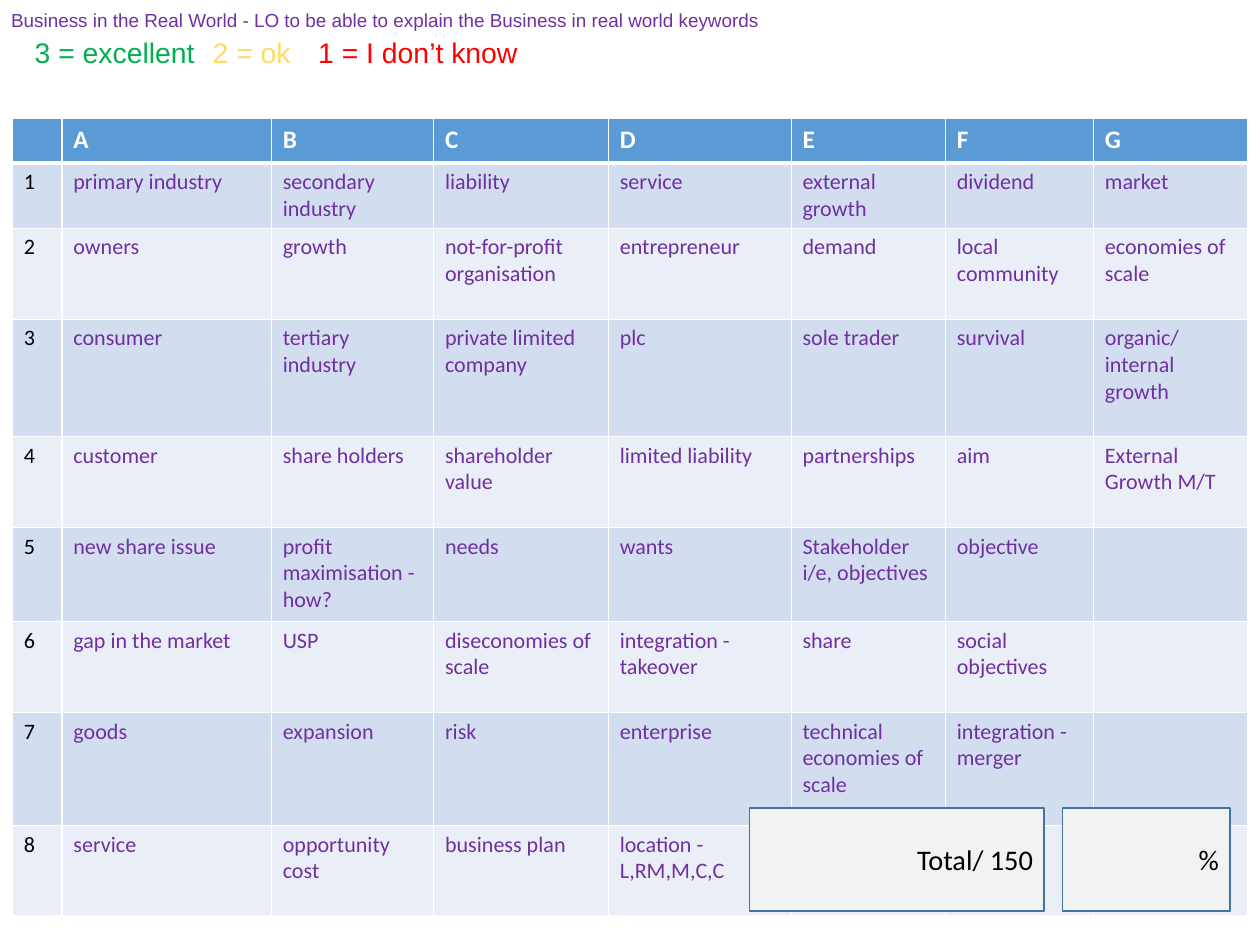
from dataclasses import dataclass

from lxml.etree import SubElement
from pptx import Presentation
from pptx.dml.color import RGBColor as Color
from pptx.enum.shapes import MSO_SHAPE as Preset
from pptx.enum.text import MSO_ANCHOR as Anchor, PP_ALIGN as Align
from pptx.oxml.ns import qn
from pptx.util import Pt


@dataclass(frozen=True)
class Theme:
    heading_font: str = "Arial"
    body_font: str = "Calibri"
    purple: str = "7030A0"
    green: str = "00B050"
    yellow: str = "FFD966"
    red: str = "FF0000"
    black: str = "000000"
    white: str = "FFFFFF"
    header_fill: str = "5B9BD5"
    odd_fill: str = "D2DEEF"
    even_fill: str = "EAEFF7"
    box_fill: str = "F2F2F2"
    box_line: str = "43739E"
    title_size: int = 12
    keyword_size: int = 14
    header_size: int = 16
    score_size: int = 18


theme = Theme()


def set_font(font, name, size, color, bold=False):
    font.name = name
    font.size = Pt(size)
    font.bold = bold
    font.color.rgb = Color.from_string(color)


def add_border(cell, side, width):
    line = SubElement(cell._tc.get_or_add_tcPr(), qn(f"a:ln{side}"), w=str(Pt(width)))
    fill = SubElement(line, qn("a:solidFill"))
    SubElement(fill, qn("a:srgbClr"), val=theme.white)


deck = Presentation()
deck.slide_width = Pt(800)
deck.slide_height = Pt(600)
page = deck.slides.add_slide(deck.slide_layouts[6])

title = page.shapes.add_textbox(Pt(0), Pt(2), Pt(750), Pt(22))
title.text_frame.word_wrap = True
para = title.text_frame.paragraphs[0]
para.text = "Business in the Real World - LO to be able to explain the Business in real world keywords"
set_font(para.font, theme.heading_font, theme.title_size, theme.purple)

keywords = [
    ["", "A", "B", "C", "D", "E", "F", "G"],
    ["1", "primary industry", "secondary industry", "liability", "service",
     "external growth", "dividend", "market"],
    ["2", "owners", "growth", "not-for-profit organisation", "entrepreneur",
     "demand", "local community", "economies of scale"],
    ["3", "consumer", "tertiary industry", "private limited company", "plc",
     "sole trader", "survival", "organic/internal growth"],
    ["4", "customer", "share holders", "shareholder value", "limited liability",
     "partnerships", "aim", "External Growth M/T"],
    ["5", "new share issue", "profit maximisation - how?", "needs", "wants",
     "Stakeholder\ni/e, objectives", "objective", ""],
    ["6", "gap in the market", "USP", "diseconomies of scale", "integration - takeover",
     "share", "social objectives", ""],
    ["7", "goods", "expansion", "risk", "enterprise",
     "technical economies of scale", "integration - merger", ""],
    ["8", "service", "opportunity cost", "business plan", "location - L,RM,M,C,C",
     "", "", ""],
]
column_widths = [31.5, 133, 103, 111, 116, 98, 94, 98]
row_heights = [28.5, 41.3, 57.8, 74.3, 57.8, 59.7, 57.8, 71.8, 57.5]

grid = page.shapes.add_table(
    len(keywords), len(column_widths), Pt(7.9), Pt(75.2),
    Pt(sum(column_widths)), Pt(sum(row_heights))).table
for column, width in zip(grid.columns, column_widths):
    column.width = Pt(width)
for row, height in zip(grid.rows, row_heights):
    row.height = Pt(height)

for row_index, words in enumerate(keywords):
    is_header = row_index == 0
    band = theme.odd_fill if row_index % 2 else theme.even_fill
    for column_index, word in enumerate(words):
        cell = grid.cell(row_index, column_index)
        add_border(cell, "L", 1)
        add_border(cell, "R", 1)
        add_border(cell, "T", 3 if row_index == 1 else 1)
        add_border(cell, "B", 3 if is_header else 1)
        cell.fill.solid()
        cell.fill.fore_color.rgb = Color.from_string(theme.header_fill if is_header else band)
        cell.text = word
        for para in cell.text_frame.paragraphs:
            if is_header:
                set_font(para.font, theme.body_font, theme.header_size, theme.white, True)
            else:
                color = theme.purple if column_index else theme.black
                set_font(para.font, theme.body_font, theme.keyword_size, color)

scale = page.shapes.add_textbox(Pt(15), Pt(19), Pt(606), Pt(29))
scale.text_frame.word_wrap = True
para = scale.text_frame.paragraphs[0]
for wording, color in [
    ("3 = excellent\t ", theme.green),
    ("2 = ok \t", theme.yellow),
    ("1 = I don’t know", theme.red),
]:
    span = para.add_run()
    span.text = wording
    set_font(span.font, theme.heading_font, theme.score_size, color)

for wording, left, width in [("Total/ 150", 476, 187), ("%", 674.5, 106.5)]:
    box = page.shapes.add_shape(Preset.RECTANGLE, Pt(left), Pt(513), Pt(width), Pt(65.5))
    box.shadow.inherit = False
    box.fill.solid()
    box.fill.fore_color.rgb = Color.from_string(theme.box_fill)
    box.line.color.rgb = Color.from_string(theme.box_line)
    box.line.width = Pt(1)
    box.text_frame.word_wrap = True
    box.text_frame.vertical_anchor = Anchor.MIDDLE
    para = box.text_frame.paragraphs[0]
    para.text = wording
    para.alignment = Align.RIGHT
    set_font(para.font, theme.body_font, theme.score_size, theme.black)

deck.save("out.pptx")
